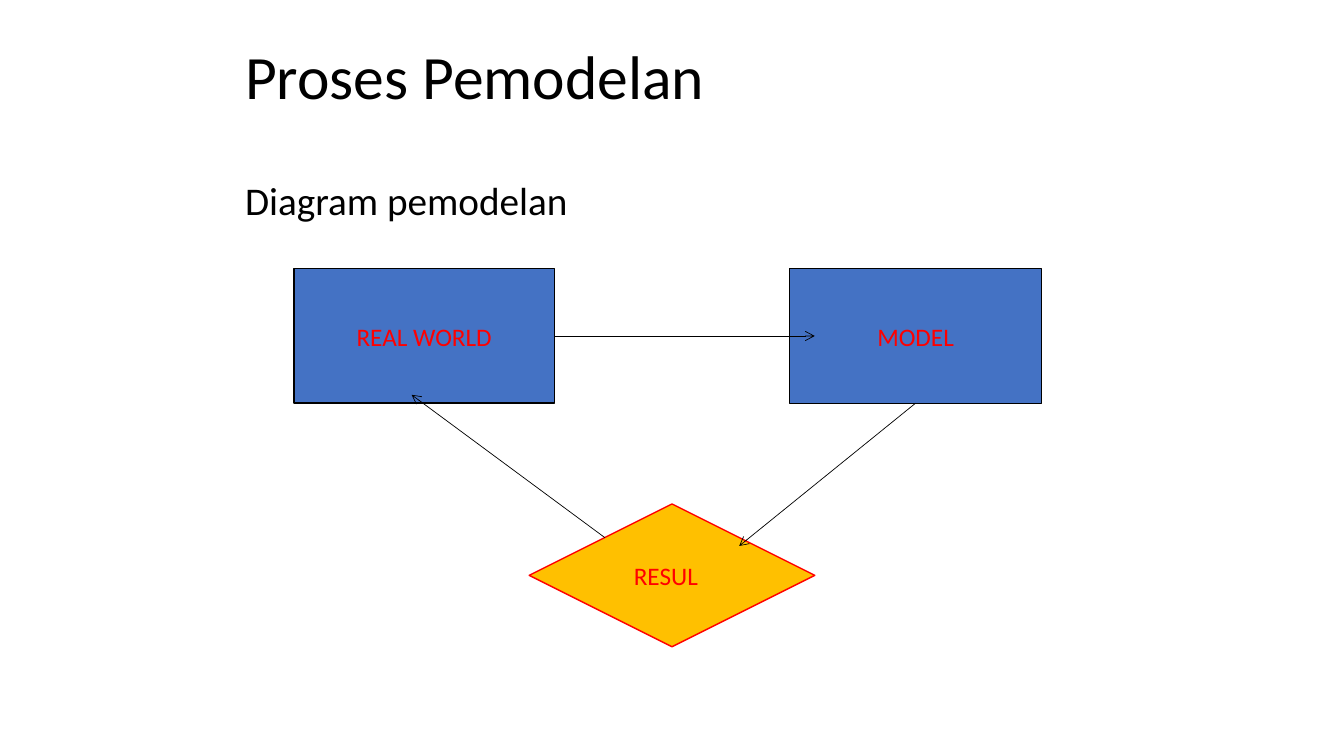
"""Builds the slide on the modelling process, laid out on a grid of 1/12 inch."""
from lxml import etree
from pptx import Presentation
from pptx.dml.color import RGBColor
from pptx.enum.shapes import MSO_CONNECTOR, MSO_SHAPE
from pptx.enum.text import MSO_ANCHOR, PP_ALIGN
from pptx.oxml.ns import qn
from pptx.util import Inches, Pt

RECTANGLE = MSO_SHAPE.RECTANGLE
PROCESS = MSO_SHAPE.FLOWCHART_PROCESS
DECISION = MSO_SHAPE.FLOWCHART_DECISION
STRAIGHT = MSO_CONNECTOR.STRAIGHT
TOP, MIDDLE = MSO_ANCHOR.TOP, MSO_ANCHOR.MIDDLE
CENTER = PP_ALIGN.CENTER

FONT = "Calibri"
BLACK, RED, BLUE, AMBER = "000000", "FF0000", "4472C4", "FFC000"
BOTTOM_SIDE, RIGHT_SIDE = 2, 3

HEADINGS = [
    ("Proses Pemodelan", 44, MIDDLE, (28, 3, 107, 13)),
    ("Diagram pemodelan", 28, TOP, (28, 21, 107, 59)),
]
STAGES = {
    "world": ("REAL WORLD", RECTANGLE, BLUE, BLACK, (35, 32, 31, 16), 0.1),
    "model": ("MODEL", PROCESS, BLUE, BLACK, (94, 32, 30, 16), 0.1),
    "result": ("RESUL", DECISION, AMBER, RED, (63, 60, 34, 17), 0.22),
}
ARROWS = [
    ((66, 40), (97, 40), ("world", RIGHT_SIDE)),
    ((109, 48), (88, 65), ("model", BOTTOM_SIDE)),
    ((72, 64), (49, 47), None),
]


def color(value):
    return RGBColor.from_string(value)


def grid(cells):
    return [Inches(cell / 12) for cell in cells]


def write(frame, wording, size, ink, anchor):
    frame.vertical_anchor = anchor
    line = frame.paragraphs[0]
    line.text = wording
    line.font.name, line.font.size = FONT, Pt(size)
    line.font.color.rgb = color(ink)
    return line


def add_heading(slide, wording, size, anchor, place):
    frame = slide.shapes.add_textbox(*grid(place)).text_frame
    frame.word_wrap = True
    write(frame, wording, size, BLACK, anchor).line_spacing = 0.9


def add_stage(slide, label, outline, fill, border, place, right_inset):
    stage = slide.shapes.add_shape(outline, *grid(place))
    stage.shadow.inherit = False
    stage.fill.solid()
    stage.fill.fore_color.rgb = color(fill)
    stage.line.color.rgb = color(border)
    stage.line.width = Pt(1)
    stage.text_frame.margin_right = Inches(right_inset)
    write(stage.text_frame, label, 18, RED, MIDDLE).alignment = CENTER
    return stage


def add_arrow(slide, start, end, joint, stages):
    arrow = slide.shapes.add_connector(STRAIGHT, *grid(start + end))
    if joint:
        name, side = joint
        arrow.begin_connect(stages[name], side)
    arrow.line.color.rgb = color(BLACK)
    arrow.line.width = Pt(0.5)
    etree.SubElement(arrow.line._get_or_add_ln(), qn("a:tailEnd"), type="arrow")
    etree.SubElement(arrow._element.spPr, qn("a:effectLst"))


def main():
    deck = Presentation()
    deck.slide_width, deck.slide_height = grid((160, 90))
    slide = deck.slides.add_slide(deck.slide_layouts[6])
    for heading in HEADINGS:
        add_heading(slide, *heading)
    stages = {name: add_stage(slide, *stage) for name, stage in STAGES.items()}
    for arrow in ARROWS:
        add_arrow(slide, *arrow, stages)
    deck.save("out.pptx")


if __name__ == "__main__":
    main()
